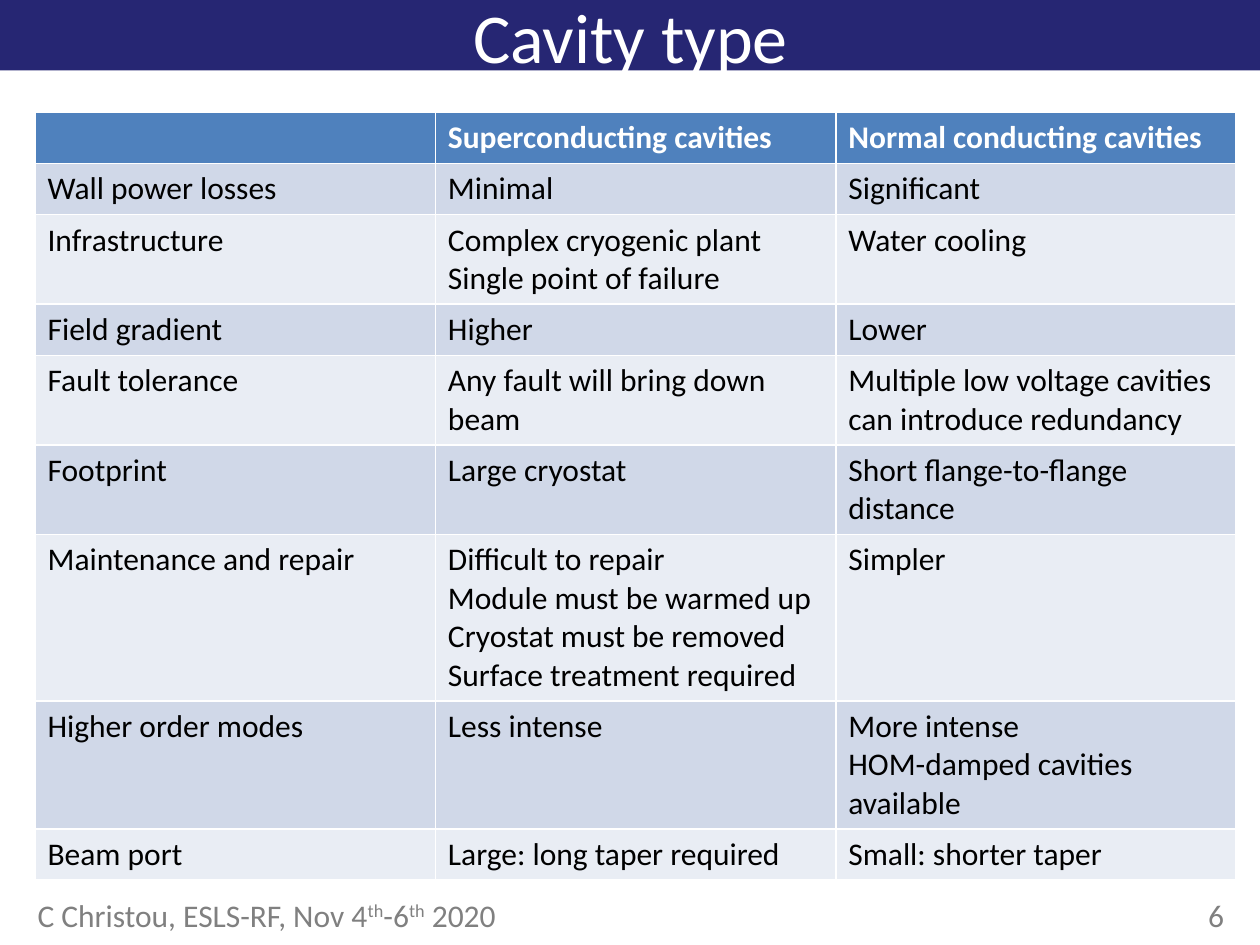
from pptx import Presentation
from pptx import util as u
from pptx.dml.color import RGBColor
from pptx.enum import shapes, text

FONT = "Calibri"
GREY = "808080"
WHITE = "FFFFFF"
COLUMN_WIDTH = 228.8
ROW_HEIGHT = 29.2
ROWS = [
    ("", "Superconducting cavities", "Normal conducting cavities"),
    ("Wall power losses", "Minimal", "Significant"),
    ("Infrastructure", "Complex cryogenic plant\nSingle point of failure", "Water cooling"),
    ("Field gradient", "Higher", "Lower"),
    ("Fault tolerance", "Any fault will bring down beam",
     "Multiple low voltage cavities can introduce redundancy"),
    ("Footprint", "Large cryostat", "Short flange-to-flange distance"),
    ("Maintenance and repair",
     "Difficult to repair\nModule must be warmed up\n"
     "Cryostat must be removed\nSurface treatment required", "Simpler"),
    ("Higher order modes", "Less intense", "More intense\nHOM-damped cavities available"),
    ("Beam port", "Large: long taper required", "Small: shorter taper"),
]


def rgb(value):
    return RGBColor.from_string(value)


def box(*lengths):
    return [u.Pt(length) for length in lengths]


def set_font(p, size, color, bold=False):
    p.font.name = FONT
    p.font.size = u.Pt(size)
    p.font.color.rgb = rgb(color)
    p.font.bold = bold


def add_bar(s):
    sp = s.shapes.add_shape(shapes.MSO_SHAPE.RECTANGLE, *box(0, 0, 720, 40.3))
    sp.shadow.inherit = False
    sp.fill.solid()
    sp.fill.fore_color.rgb = rgb("262673")
    sp.line.fill.background()
    s.shapes._spTree.insert(2, sp._element)


def set_title(s, title):
    sp = s.shapes.title
    sp.left, sp.top, sp.width, sp.height = box(14.4, -7.9, 692, 56.9)
    tf = sp.text_frame
    tf.text = title
    tf.vertical_anchor = text.MSO_ANCHOR.MIDDLE
    p = tf.paragraphs[0]
    p.alignment = text.PP_ALIGN.CENTER
    set_font(p, 40, WHITE)


def add_footer(s, left, width, parts):
    tf = s.shapes.add_textbox(*box(left, 508.3, width, 30.2)).text_frame
    tf.word_wrap = True
    p = tf.paragraphs[0]
    set_font(p, 18, GREY)
    for part in parts:
        r = p.add_run()
        r.text = part
        if part == "th":
            r._r.get_or_add_rPr().set("baseline", "30000")


def add_comparison(s, rows):
    columns = len(rows[0])
    table = s.shapes.add_table(
        len(rows), columns,
        *box(20, 64.3, columns * COLUMN_WIDTH, len(rows) * ROW_HEIGHT)).table
    for column in table.columns:
        column.width = u.Pt(COLUMN_WIDTH)
    for i, row in enumerate(rows):
        table.rows[i].height = u.Pt(ROW_HEIGHT)
        header = i == 0
        fill = "4F81BD" if header else ("E9EDF4", "D0D8E8")[i % 2]
        for j, content in enumerate(row):
            cell = table.cell(i, j)
            cell.fill.solid()
            cell.fill.fore_color.rgb = rgb(fill)
            cell.text = content
            for p in cell.text_frame.paragraphs:
                set_font(p, 18, WHITE if header else "000000", header)


def main():
    prs = Presentation()
    prs.slide_width, prs.slide_height = box(720, 540)
    s = prs.slides.add_slide(prs.slide_layouts[5])
    add_bar(s)
    set_title(s, "Cavity type")
    add_comparison(s, ROWS)
    add_footer(s, 14.4, 556, ["C Christou, ESLS-RF, Nov 4", "th", "-6", "th", " 2020"])
    add_footer(s, 683.3, 33.8, ["6"])
    prs.save("out.pptx")


if __name__ == "__main__":
    main()
